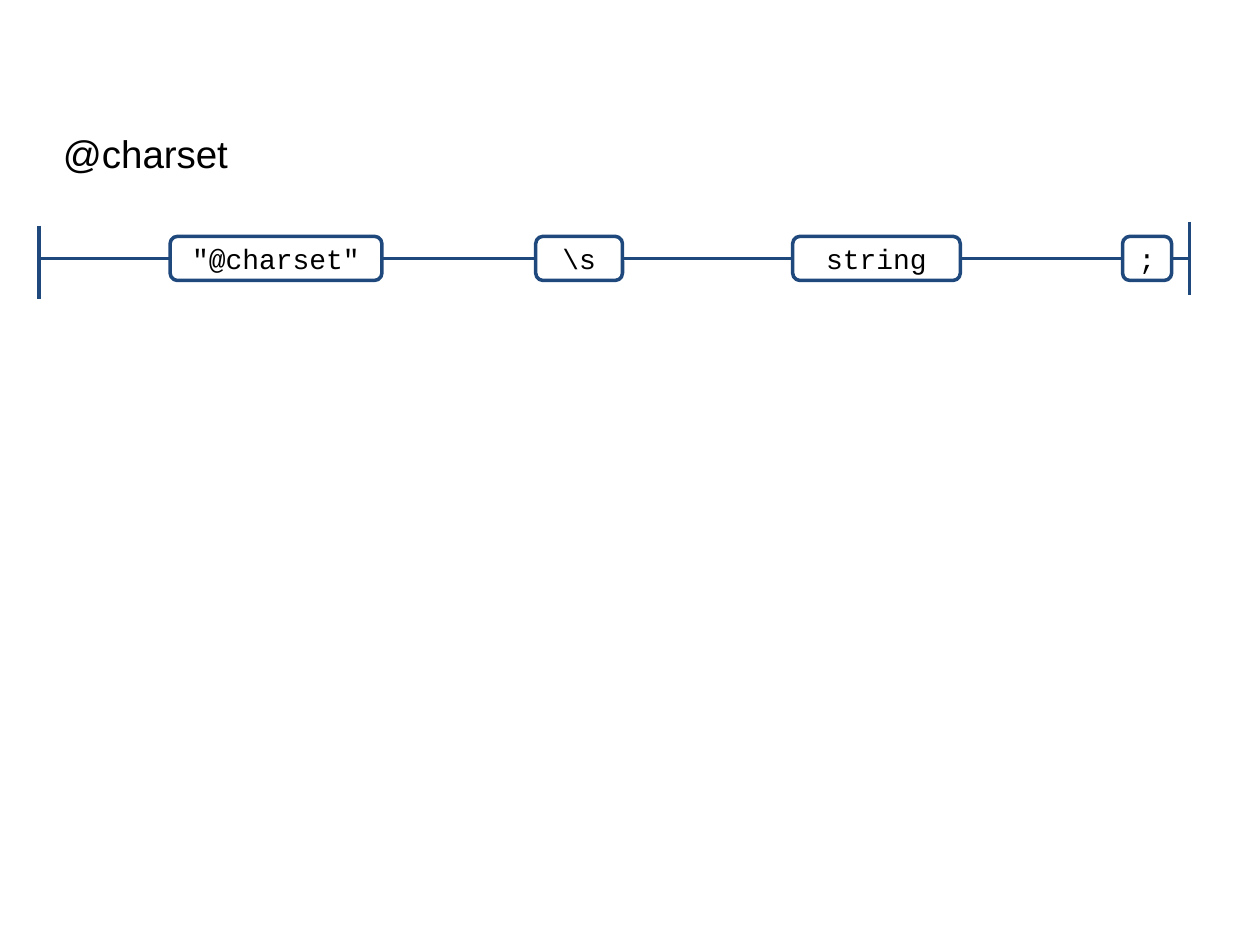
from dataclasses import dataclass

from lxml.etree import SubElement
from pptx import Presentation
from pptx.dml.color import RGBColor
from pptx.enum.shapes import MSO_CONNECTOR as Connector, MSO_SHAPE as Shape
from pptx.enum.text import MSO_ANCHOR as Anchor, MSO_AUTO_SIZE as AutoSize, PP_ALIGN as Align
from pptx.oxml.ns import qn
from pptx.util import Cm, Pt


@dataclass(frozen=True)
class Theme:
    """Colours, fonts and sizes of the syntax diagram."""
    line: RGBColor = RGBColor(0x1F, 0x49, 0x7D)
    fill: RGBColor = RGBColor(0xFF, 0xFF, 0xFF)
    text: RGBColor = RGBColor(0, 0, 0)
    title_font: str = "Arial"
    token_font: str = "Courier New"
    title_size: Pt = Pt(22)
    token_size: Pt = Pt(16)
    rail_width: Pt = Pt(1.5)
    outline_width: Pt = Pt(2)


THEME = Theme()
RAIL_START, RAIL_END, RAIL_Y = 0.79, 23.98, 5.21
TOKEN_HEIGHT = 0.89
BAR_HEIGHT = 1.47
TOKENS = [
    ('"@charset"', 3.43, 4.27),
    ("\\s", 10.8, 1.75),
    ("string", 15.98, 3.38),
    (";", 22.63, 0.99),
]


def add_run(paragraph, text, font, size):
    """Add one styled run to a paragraph."""
    run = paragraph.add_run()
    run.text = text
    run.font.name = font
    run.font.size = size
    run.font.color.rgb = THEME.text


def add_line(slide, start, end, width):
    """Draw a straight line without shadow between two points in cm."""
    line = slide.shapes.add_connector(Connector.STRAIGHT, *map(Cm, start + end))
    line.line.color.rgb = THEME.line
    line.line.width = width
    SubElement(line._element.spPr, qn("a:effectLst"))


def add_bar(slide, x, top):
    """Draw an upright end bar of the rail."""
    add_line(slide, (x, top), (x, top + BAR_HEIGHT), THEME.outline_width)


def add_title(slide, text):
    """Add the rule name above the rail."""
    box = slide.shapes.add_textbox(Cm(1.02), Cm(2.49), Cm(14.96), Cm(1.19))
    frame = box.text_frame
    frame.word_wrap = True
    frame.auto_size = AutoSize.SHAPE_TO_FIT_TEXT
    add_run(frame.paragraphs[0], text, THEME.title_font, THEME.title_size)


def add_token(slide, text, left, width):
    """Add a rounded token box centred on the rail."""
    shape = slide.shapes.add_shape(
        Shape.FLOWCHART_ALTERNATE_PROCESS,
        Cm(left), Cm(RAIL_Y - TOKEN_HEIGHT / 2), Cm(width), Cm(TOKEN_HEIGHT))
    shape.shadow.inherit = False
    shape.fill.solid()
    shape.fill.fore_color.rgb = THEME.fill
    shape.line.color.rgb = THEME.line
    shape.line.width = THEME.outline_width
    frame = shape.text_frame
    frame.word_wrap = True
    frame.vertical_anchor = Anchor.MIDDLE
    paragraph = frame.paragraphs[0]
    paragraph.alignment = Align.CENTER
    add_run(paragraph, text, THEME.token_font, THEME.token_size)


def main():
    """Build and save the slide."""
    presentation = Presentation()
    presentation.slide_width, presentation.slide_height = Cm(25.4), Cm(19.05)
    slide = presentation.slides.add_slide(presentation.slide_layouts[6])
    add_line(slide, (RAIL_START, RAIL_Y), (RAIL_END, RAIL_Y), THEME.rail_width)
    add_bar(slide, RAIL_START, 4.55)
    add_bar(slide, RAIL_END, 4.47)
    add_title(slide, "@charset")
    for text, left, width in TOKENS:
        add_token(slide, text, left, width)
    presentation.save("out.pptx")


if __name__ == "__main__":
    main()
